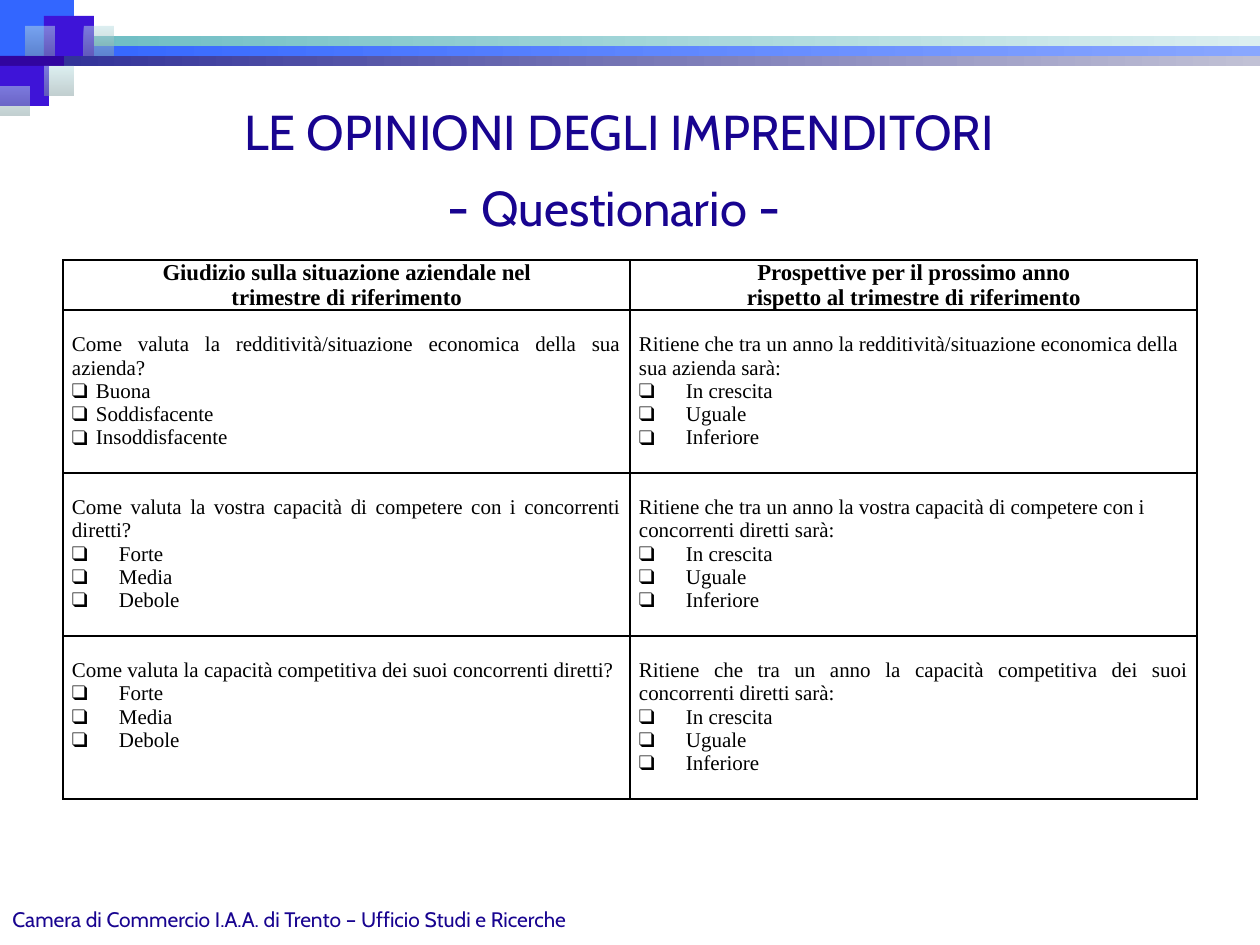
"""Build the questionnaire slide on entrepreneurs' opinions."""
from lxml.etree import SubElement
from pptx import Presentation
from pptx.dml.color import RGBColor
from pptx.enum.shapes import MSO_SHAPE as SHAPE
from pptx.enum.text import MSO_ANCHOR as ANCHOR, MSO_AUTO_SIZE as AUTO, PP_ALIGN as AL
from pptx.oxml import parse_xml
from pptx.oxml.ns import nsdecls, qn
from pptx.util import Pt

PX = 914400 / 126
BLACK = RGBColor(0x00, 0x00, 0x00)
NAVY = RGBColor(0x18, 0x04, 0x90)
BLUE = RGBColor(0x33, 0x66, 0xFF)
LIGHT_BLUE = RGBColor(0x89, 0xA7, 0xFF)
INDIGO = RGBColor(0x33, 0x33, 0x99)
LIGHT_INDIGO = RGBColor(0xC1, 0xC1, 0xD5)
TEAL = RGBColor(0x6D, 0xBD, 0xC3)
LIGHT_TEAL = RGBColor(0xDC, 0xEF, 0xF0)
PURPLE = RGBColor(0x31, 0x05, 0x9F)
VIOLET = RGBColor(0x3E, 0x14, 0xD8)
ICE = RGBColor(0xBB, 0xE0, 0xE3)
GREY = RGBColor(0x86, 0xA0, 0xA2)


def px(*values):
    return [round(v * PX) for v in values]


def write(p, text, size=12, font="Times New Roman", color=BLACK, bold=False, align=None):
    r = p.add_run()
    r.text = text
    r.font.size, r.font.name, r.font.bold = Pt(size), font, bold
    r.font.color.rgb = color
    if align is not None:
        p.alignment = align


prs = Presentation()
prs.slide_width, prs.slide_height = px(1260, 945)
s = prs.slides.add_slide(prs.slide_layouts[5])

decorations = [
    ((0, 0, 74, 56), [BLUE]),
    ((64, 56, 1196, 10), [INDIGO, LIGHT_INDIGO]),
    ((54, 46, 1206, 10), [BLUE, LIGHT_BLUE]),
    ((74, 36, 1186, 10), [TEAL, LIGHT_TEAL]),
    ((0, 56, 64, 10), [PURPLE]),
    ((44, 16, 50, 40), [VIOLET]),
    ((0, 66, 49, 40), [VIOLET]),
]
for x, y in [(25, 26), (44, 66), (84, 26), (0, 86)]:
    decorations.append(((x, y, 30, 30), [ICE, GREY]))

for box, colors in decorations:
    sp = s.shapes.add_shape(SHAPE.RECTANGLE, *px(*box))
    sp.shadow.inherit = False
    sp.line.fill.background()
    if len(colors) == 1:
        sp.fill.solid()
        sp.fill.fore_color.rgb = colors[0]
        continue
    glass = colors[0] == ICE
    sp.fill.gradient()
    sp.fill.gradient_angle = 270 if glass else 0
    for stop, color in zip(sp.fill.gradient_stops, colors):
        stop.color.rgb = color
    if glass:
        for clr in sp._element.spPr.iter(qn("a:srgbClr")):
            SubElement(clr, qn("a:alpha"), val="50000")

title = s.shapes.title
title.left, title.top, title.width, title.height = px(0, 86, 1238, 89)
subtitle = s.shapes.add_textbox(*px(0, 176, 1228, 59))
footer = s.shapes.add_textbox(*px(0, 900, 645, 45))
for sp in (title, subtitle, footer):
    tf = sp.text_frame
    tf.word_wrap = True
    tf.auto_size = AUTO.NONE
    tf.vertical_anchor = ANCHOR.TOP if sp is footer else ANCHOR.MIDDLE

cabin = {"font": "Cabin", "color": NAVY}
write(title.text_frame.paragraphs[0], "LE OPINIONI DEGLI IMPRENDITORI", size=28, align=AL.CENTER, **cabin)
p = subtitle.text_frame.paragraphs[0]
for text, size in [("- ", 30), ("Questionario", 28), (" -", 30)]:
    write(p, text, size=size, align=AL.CENTER, **cabin)
write(footer.text_frame.paragraphs[0],
      "Camera di Commercio I.A.A. di Trento – Ufficio Studi e Ricerche", **cabin)

headers = [
    ["Giudizio sulla situazione aziendale nel", "trimestre di riferimento"],
    ["Prospettive per il prossimo anno", "rispetto al trimestre di riferimento"],
]
strength = ["Forte", "Media", "Debole"]
trend = ["In crescita", "Uguale", "Inferiore"]
questions = [
    [("Come valuta la redditività/situazione economica della sua azienda?", AL.JUSTIFY,
      ["Buona", "Soddisfacente", "Insoddisfacente"], 24),
     ("Ritiene che tra un anno la redditività/situazione economica della sua azienda sarà:",
      AL.LEFT, trend, 47)],
    [("Come valuta la vostra capacità di competere con i concorrenti diretti?", AL.JUSTIFY,
      strength, 47),
     ("Ritiene che tra un anno la vostra capacità di competere con i concorrenti diretti sarà:",
      AL.LEFT, trend, 47)],
    [("Come valuta la capacità competitiva dei suoi concorrenti diretti?", AL.JUSTIFY,
      strength, 47),
     ("Ritiene che tra un anno la capacità competitiva dei suoi concorrenti diretti sarà:",
      AL.JUSTIFY, trend, 47)],
]

table = s.shapes.add_table(4, 2, *px(63, 260, 1134, 539)).table
table.first_row = table.horz_banding = False
for row, height in zip(table.rows, px(50, 163, 163, 163)):
    row.height = height

for i in range(4):
    for j in range(2):
        cell = table.cell(i, j)
        cell.fill.background()
        cell.margin_left, cell.margin_right, cell.margin_top, cell.margin_bottom = px(
            9, 9, 23 if i else 0, 0)
        tcPr = cell._tc.get_or_add_tcPr()
        for k, side in enumerate(["lnL", "lnR", "lnT", "lnB"]):
            tcPr.insert(k, parse_xml(
                f'<a:{side} {nsdecls("a")} w="12700"><a:solidFill>'
                f'<a:srgbClr val="{BLACK}"/></a:solidFill></a:{side}>'))
        tf = cell.text_frame
        p = tf.paragraphs[0]
        if i == 0:
            first, second = headers[j]
            write(p, first, size=13, bold=True, align=AL.CENTER)
            write(tf.add_paragraph(), second, size=13, bold=True, align=AL.CENTER)
            continue
        question, align, answers, indent = questions[i - 1][j]
        write(p, question, align=align)
        for answer in answers:
            p = tf.add_paragraph()
            write(p, answer, align=AL.LEFT)
            pPr = p._p.get_or_add_pPr()
            margin = px(indent)[0]
            pPr.set("marL", str(margin))
            pPr.set("indent", str(-margin))
            SubElement(pPr, qn("a:buFont"), typeface="Times New Roman")
            SubElement(pPr, qn("a:buChar"), char="❑")

prs.save("out.pptx")
